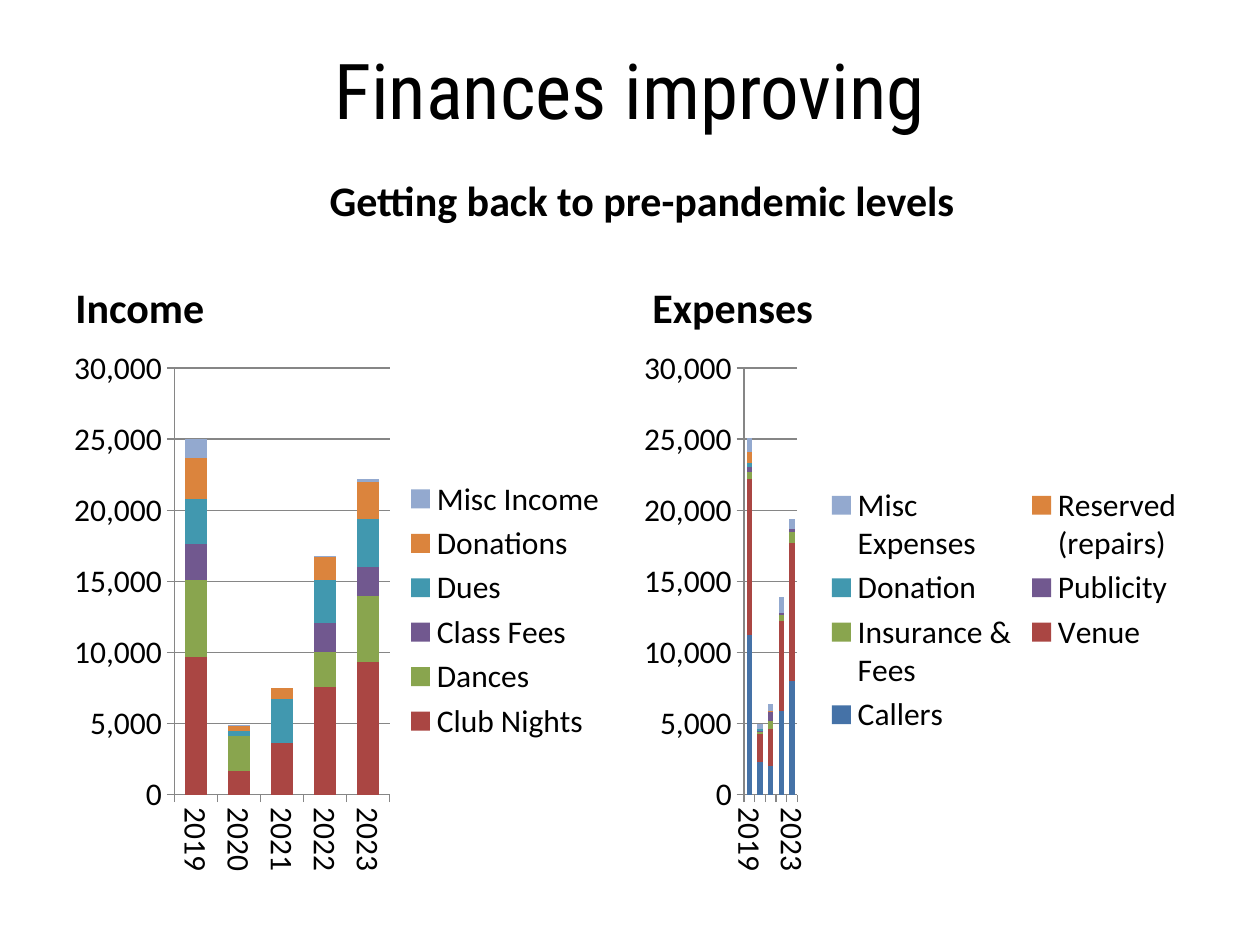
from dataclasses import dataclass

import pptx
import pptx.chart.data
import pptx.dml.color
import pptx.enum.chart
import pptx.enum.text
import pptx.util

PX = 914400 / 126
YEARS = ["2019", "2020", "2021", "2022", "2023"]
BLUE, RED, GREEN, PURPLE = "4572A7", "AA4643", "89A54E", "71588F"
TEAL, ORANGE, PALE_BLUE = "4198AF", "DB843D", "93A9CF"
BLACK, GRAY = "000000", "868686"
ALIGN = pptx.enum.text.PP_ALIGN
ANCHOR = pptx.enum.text.MSO_ANCHOR


@dataclass
class Series:
    name: str
    color: str
    values: tuple[int, ...]


@dataclass
class Panel:
    heading: str
    left: int
    series: list[Series]


@dataclass
class Label:
    text: str
    box: tuple[int, int, int, int]
    size: int
    align: ALIGN
    anchor: ANCHOR
    font: str = "Calibri"
    bold: bool = True


PANELS = [
    Panel("Income", 63, [
        Series("Club Nights", RED, (9700, 1700, 3600, 7600, 9300)),
        Series("Dances", GREEN, (5400, 2400, 0, 2400, 4700)),
        Series("Class Fees", PURPLE, (2500, 0, 0, 2100, 2000)),
        Series("Dues", TEAL, (3200, 400, 3100, 3000, 3400)),
        Series("Donations", ORANGE, (2900, 300, 800, 1600, 2600)),
        Series("Misc Income", PALE_BLUE, (1300, 100, 0, 100, 200)),
    ]),
    Panel("Expenses", 640, [
        Series("Callers", BLUE, (11200, 2300, 2000, 5900, 8000)),
        Series("Venue", RED, (11000, 2000, 2600, 6300, 9700)),
        Series("Insurance & Fees", GREEN, (500, 100, 600, 400, 800)),
        Series("Publicity", PURPLE, (300, 100, 600, 200, 200)),
        Series("Donation", TEAL, (300, 100, 0, 0, 0)),
        Series("Reserved (repairs)", ORANGE, (800, 0, 100, 0, 0)),
        Series("Misc Expenses", PALE_BLUE, (1000, 400, 500, 1100, 700)),
    ]),
]


def px(n: int) -> int:
    return round(n * PX)


def rgb(color: str) -> pptx.dml.color.RGBColor:
    return pptx.dml.color.RGBColor.from_string(color)


def set_attrs(obj, values: dict) -> None:
    for name, value in values.items():
        setattr(obj, name, value)


def set_font(font, size: int, name: str = "Calibri", bold: bool = False) -> None:
    set_attrs(font, {"size": pptx.util.Pt(size), "name": name, "bold": bold})
    font.color.rgb = rgb(BLACK)


def set_line(line) -> None:
    line.color.rgb = rgb(GRAY)
    line.width = pptx.util.Pt(0.75)


def add_label(s, label: Label) -> None:
    sp = s.shapes.add_textbox(*map(px, label.box))
    tf = sp.text_frame
    set_attrs(tf, {"word_wrap": True, "vertical_anchor": label.anchor})
    p = tf.paragraphs[0]
    p.alignment = label.align
    r = p.add_run()
    r.text = label.text
    set_font(r.font, label.size, label.font, label.bold)


def add_stacked_chart(s, panel: Panel) -> None:
    data = pptx.chart.data.CategoryChartData(number_format="#,##0")
    data.categories = YEARS
    for series in panel.series:
        data.add_series(series.name, series.values)
    chart = s.shapes.add_chart(
        pptx.enum.chart.XL_CHART_TYPE.COLUMN_STACKED,
        *map(px, (panel.left, 338, 557, 544)), data).chart
    set_attrs(chart, {"has_title": False, "has_legend": True})
    set_font(chart.font, 18)
    set_attrs(chart.legend, {
        "position": pptx.enum.chart.XL_LEGEND_POSITION.RIGHT,
        "include_in_layout": False})
    plot = chart.plots[0]
    set_attrs(plot, {"gap_width": 100, "overlap": 100, "vary_by_categories": False})
    for drawn, series in zip(plot.series, panel.series):
        drawn.format.fill.solid()
        drawn.format.fill.fore_color.rgb = rgb(series.color)
    for axis in (chart.category_axis, chart.value_axis):
        axis.major_tick_mark = pptx.enum.chart.XL_TICK_MARK.OUTSIDE
        set_line(axis.format.line)
        set_font(axis.tick_labels.font, 18)
    set_attrs(chart.value_axis, {
        "minimum_scale": 0, "maximum_scale": 30000, "major_unit": 5000,
        "has_major_gridlines": True})
    set_line(chart.value_axis.major_gridlines.format.line)
    set_attrs(chart.value_axis.tick_labels, {
        "number_format": "#,##0", "number_format_is_linked": False})
    body = chart.category_axis._element.txPr.bodyPr
    body.set("rot", "5400000")
    body.set("vert", "horz")


def main() -> None:
    prs = pptx.Presentation()
    set_attrs(prs, {"slide_width": px(1260), "slide_height": px(945)})
    s = prs.slides.add_slide(prs.slide_layouts[6])
    add_label(s, Label("Finances improving", (63, 10, 1134, 158), 44,
                       ALIGN.CENTER, ANCHOR.MIDDLE, "Roboto Condensed", False))
    add_label(s, Label("Getting back to pre-pandemic levels", (243, 168, 798, 63), 24,
                       ALIGN.CENTER, ANCHOR.TOP))
    for panel in PANELS:
        add_label(s, Label(panel.heading, (panel.left, 250, 557, 88), 24,
                           ALIGN.LEFT, ANCHOR.BOTTOM))
        add_stacked_chart(s, panel)
    prs.save("out.pptx")


if __name__ == "__main__":
    main()
